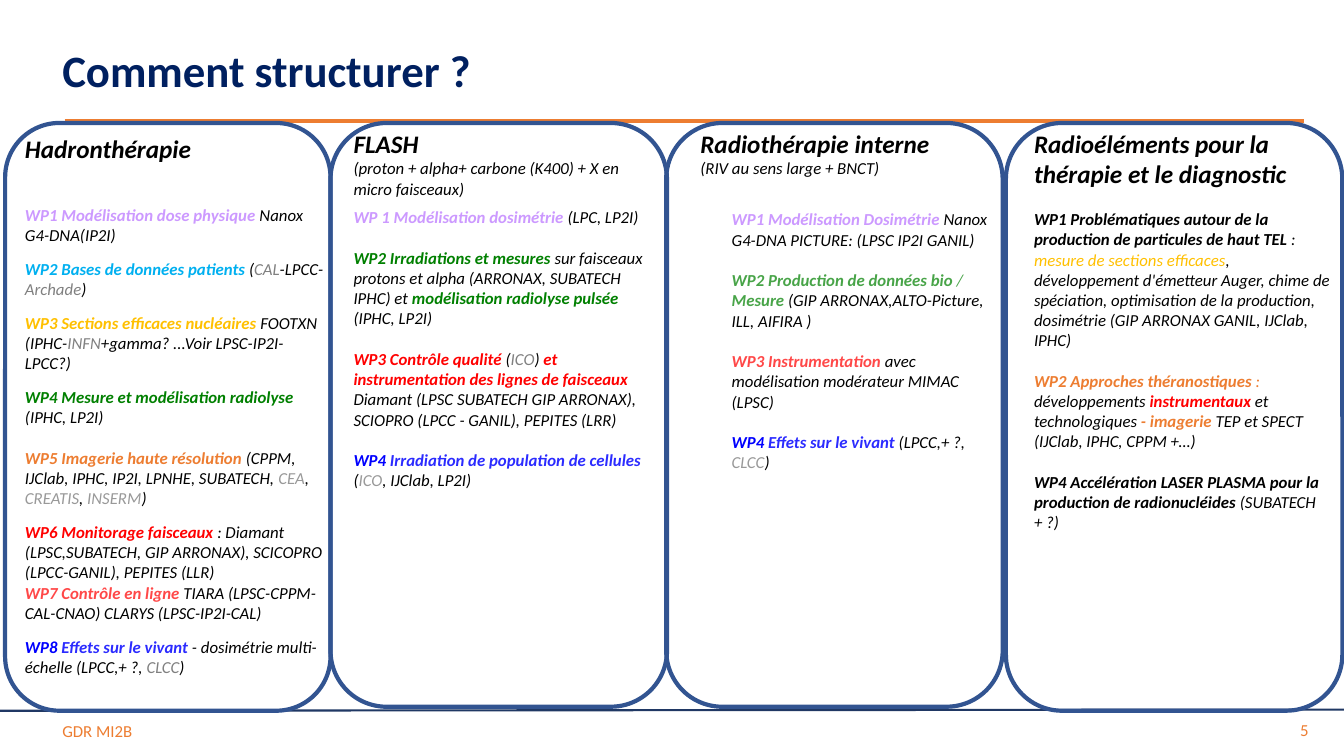
"""Slide of four research themes, each a rounded panel listing its work packages."""
from lxml.etree import SubElement
from pptx import Presentation
from pptx.dml.color import RGBColor
from pptx.enum.shapes import MSO_CONNECTOR, MSO_SHAPE
from pptx.enum.text import MSO_ANCHOR as Anchor, PP_ALIGN as Align
from pptx.oxml.ns import qn
from pptx.util import Cm, Pt

FONT = "Calibri"
BLACK = RGBColor(0x00, 0x00, 0x00)
NAVY = RGBColor(0x00, 0x20, 0x60)
RULE_NAVY = RGBColor(0x20, 0x38, 0x64)
PANEL_BLUE = RGBColor(0x32, 0x54, 0x91)
ORANGE = RGBColor(0xED, 0x7D, 0x31)
LILAC = RGBColor(0xCC, 0x99, 0xFF)
SKY = RGBColor(0x00, 0xB0, 0xF0)
GOLD = RGBColor(0xFF, 0xC0, 0x00)
GREEN = RGBColor(0x00, 0x80, 0x00)
SOFT_GREEN = RGBColor(0x48, 0xA4, 0x48)
RED = RGBColor(0xFF, 0x00, 0x00)
SOFT_RED = RGBColor(0xFF, 0x48, 0x48)
BLUE = RGBColor(0x00, 0x00, 0xFF)
SOFT_BLUE = RGBColor(0x2B, 0x2B, 0xFF)
GREY = RGBColor(0x80, 0x80, 0x80)
LIGHT_GREY = RGBColor(0x99, 0x99, 0x99)


def plain(text, color=BLACK):
    return text, color, False


def bold(text, color=BLACK):
    return text, color, True


hadron = [
    (0, [bold("Hadronthérapie")]),
    (29.3, [bold("WP1 Modélisation dose physique ", LILAC), plain("Nanox G4-DNA(IP2I)")]),
    (9.8, [bold("WP2 Bases de données patients ", SKY), plain("("), plain("CAL", GREY),
           plain("-LPCC-"), plain("Archade", GREY), plain(")")]),
    (9.8, [bold("WP3 Sections efficaces nucléaires ", GOLD), plain("FOOTXN (IPHC-"),
           plain("INFN", GREY), plain("+gamma? ...Voir LPSC-IP2I-LPCC?)")]),
    (9.8, [bold("WP4 Mesure et modélisation radiolyse", GREEN), plain(" (IPHC, LP2I)")]),
    (14.65, [bold("WP5 Imagerie haute résolution ", ORANGE),
             plain("(CPPM, IJClab, IPHC, IP2I, LPNHE, SUBATECH, "), plain("CEA", LIGHT_GREY),
             plain(", "), plain("CREATIS", LIGHT_GREY), plain(", "),
             plain("INSERM", LIGHT_GREY), plain(")")]),
    (9.8, [bold("WP6 Monitorage faisceaux ", RED),
           plain(": Diamant (LPSC,SUBATECH, GIP ARRONAX), SCICOPRO (LPCC-GANIL), PEPITES (LLR)")]),
    (0, [bold("WP7 Contrôle en ligne ", SOFT_RED),
         plain("TIARA (LPSC-CPPM-CAL-CNAO) CLARYS (LPSC-IP2I-CAL)")]),
    (9.8, [bold("WP8 ", BLUE), bold("Effets sur le vivant ", SOFT_BLUE),
           plain("- dosimétrie multi-échelle (LPCC,+ ?, "), plain("CLCC", GREY), plain(")")]),
]
flash = [
    (0, [bold("FLASH")]),
    (0, [plain("(proton + alpha+ carbone (K400) + X en micro faisceaux)")]),
    (6.1, [bold("WP 1 Modélisation dosimétrie ", LILAC), plain("(LPC, LP2I)")]),
    (14.65, [bold("WP2 Irradiations et mesures", GREEN),
             plain(" sur faisceaux protons et alpha (ARRONAX, SUBATECH IPHC) et "),
             bold("modélisation radiolyse pulsée ", GREEN), plain("(IPHC, LP2I)")]),
    (14.65, [bold("WP3 Contrôle qualité ", RED), plain("("), plain("ICO", GREY), plain(") "),
             bold("et instrumentation des lignes de faisceaux", RED),
             plain(" Diamant (LPSC SUBATECH GIP ARRONAX), SCIOPRO (LPCC - GANIL), PEPITES (LRR)")]),
    (14.65, [bold("WP4 ", BLUE), bold("Irradiation de population de cellules ", SOFT_BLUE),
             plain("("), plain("ICO", LIGHT_GREY), plain(", IJClab, LP2I)")]),
]
internal = [
    (0, [bold("Radiothérapie interne")]),
    (0, [plain("(RIV au sens large + BNCT)")]),
    (22, [bold("WP1 Modélisation Dosimétrie ", LILAC),
          plain("Nanox G4-DNA PICTURE: (LPSC IP2I GANIL)")]),
    (14.65, [bold("WP2 Production de données bio", SOFT_GREEN), plain(" / ", SOFT_GREEN),
             bold("Mesure ", SOFT_GREEN), plain("(GIP ARRONAX,ALTO-Picture, ILL, AIFIRA )")]),
    (14.65, [bold("WP3 Instrumentation ", SOFT_RED),
             plain("avec modélisation modérateur MIMAC (LPSC)")]),
    (14.65, [bold("WP4 ", BLUE), bold("Effets sur le vivant ", SOFT_BLUE),
             plain("(LPCC,+ ?, "), plain("CLCC", LIGHT_GREY), plain(")")]),
]
radioelements = [
    (0, [bold("Radioéléments pour la thérapie et le diagnostic")]),
    (14.65, [bold("WP1 Problématiques autour de la production de particules de haut TEL "),
             plain(": "), plain("mesure de sections efficaces", GOLD),
             plain(", développement d'émetteur Auger, chime de spéciation, optimisation "
                   "de la production, dosimétrie (GIP ARRONAX GANIL, IJClab, IPHC)")]),
    (14.65, [bold("WP2 Approches théranostiques ", ORANGE), plain(": ", ORANGE),
             plain("développements "), bold("instrumentaux ", RED), plain("et technologiques "),
             bold("- imagerie ", ORANGE), plain("TEP et SPECT (IJClab, IPHC, CPPM +…)")]),
    (14.65, [bold("WP4 Accélération LASER PLASMA pour la production de radionucléides "),
             plain("(SUBATECH + ?)")]),
]

prs = Presentation()
prs.slide_width, prs.slide_height = Cm(33.87), Cm(19.05)
slide = prs.slides.add_slide(prs.slide_layouts[6])

for x1, y1, x2, y2, color, weight in [
    (1.63, 3.05, 32.87, 3.05, ORANGE, 3),
    (0, 17.91, 33.87, 17.88, RULE_NAVY, 1.5),
]:
    rule = slide.shapes.add_connector(MSO_CONNECTOR.STRAIGHT, Cm(x1), Cm(y1), Cm(x2), Cm(y2))
    rule.line.color.rgb = color
    rule.line.width = Pt(weight)
    SubElement(rule._element.spPr, qn("a:effectLst"))

for text, left, top, width, height, size, color, is_bold, align in [
    ("Comment structurer ?", 1.32, 0.94, 11.18, 1.63, 32, NAVY, True, Align.LEFT),
    ("GDR MI2B", 1.32, 17.9, 30.33, 1.02, 12, ORANGE, False, Align.LEFT),
    ("5", 31.88, 17.88, 1.35, 1.02, 12, ORANGE, False, Align.RIGHT),
]:
    frame = slide.shapes.add_textbox(Cm(left), Cm(top), Cm(width), Cm(height)).text_frame
    frame.word_wrap = True
    frame.vertical_anchor = Anchor.MIDDLE
    frame.paragraphs[0].alignment = align
    run = frame.paragraphs[0].add_run()
    run.text = text
    run.font.name, run.font.size, run.font.bold = FONT, Pt(size), is_bold
    run.font.color.rgb = color

for left, width, height, text_left, text_top, text_width, indent, theme in [
    (0.13, 8.2, 14.81, 0.38, 3.23, 8.05, 0, hadron),
    (8.33, 8.48, 14.71, 8.66, 3.1, 8.05, 0, flash),
    (16.79, 8.48, 14.71, 17.4, 3.1, 7.95, 0.79, internal),
    (25.35, 8.48, 14.81, 25.81, 3.1, 8.05, 0, radioelements),
]:
    panel = slide.shapes.add_shape(
        MSO_SHAPE.ROUNDED_RECTANGLE, Cm(left), Cm(3.1), Cm(width), Cm(height))
    panel.shadow.inherit = False
    panel.fill.background()
    panel.line.color.rgb = PANEL_BLUE
    panel.line.width = Pt(3)

    frame = slide.shapes.add_textbox(
        Cm(text_left), Cm(text_top), Cm(text_width), Cm(height - 0.3)).text_frame
    frame.word_wrap = True
    for row, (gap, runs) in enumerate(theme):
        paragraph = frame.add_paragraph() if row else frame.paragraphs[0]
        if gap:
            paragraph.space_before = Pt(gap)
        if indent and row > 1:
            paragraph._p.get_or_add_pPr().set("marL", str(Cm(indent)))
        for text, color, is_bold in runs:
            run = paragraph.add_run()
            run.text = text
            run.font.name, run.font.size = FONT, Pt(12 if row else 18)
            run.font.bold, run.font.italic = is_bold, True
            run.font.color.rgb = color

prs.save("out.pptx")
